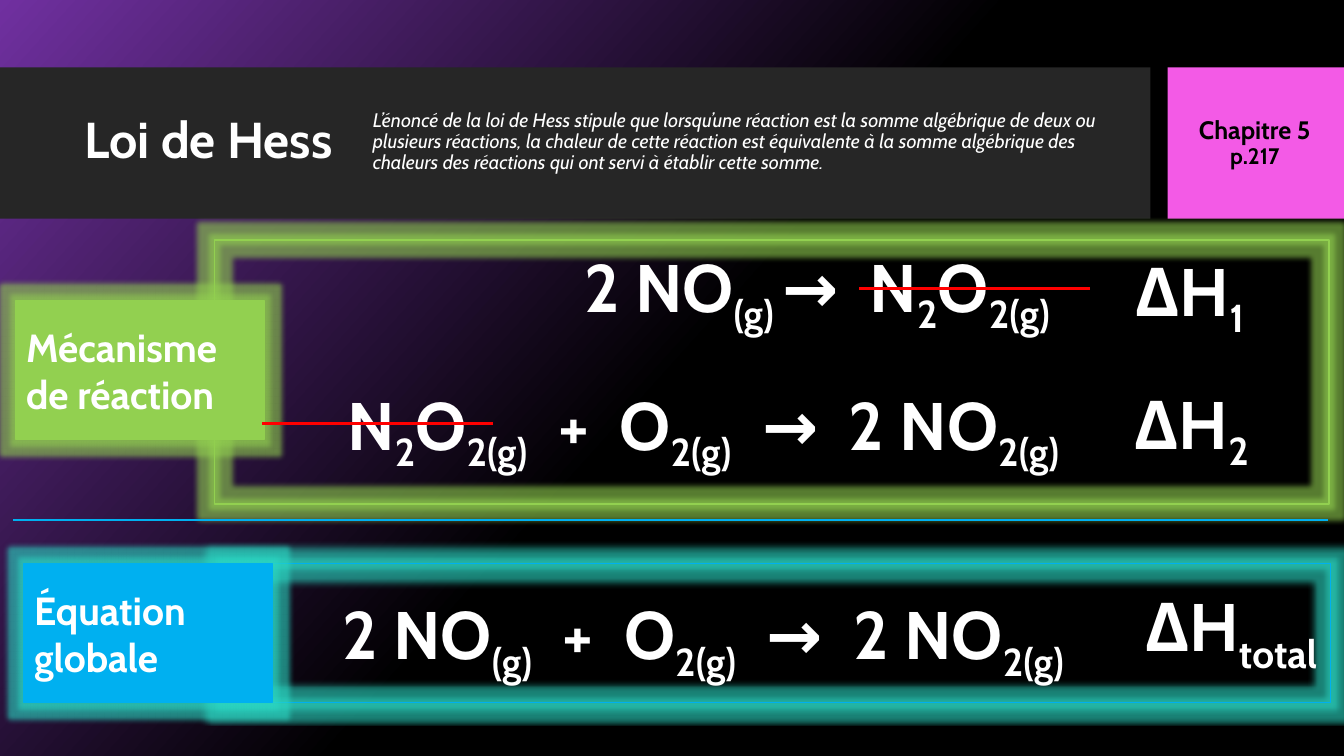
from lxml import etree
from pptx import Presentation
from pptx.dml.color import RGBColor
from pptx.enum.shapes import MSO_CONNECTOR, MSO_SHAPE
from pptx.enum.text import MSO_ANCHOR, PP_ALIGN
from pptx.oxml.ns import qn
from pptx.util import Inches, Pt

STRAIGHT = MSO_CONNECTOR.STRAIGHT
RECTANGLE = MSO_SHAPE.RECTANGLE
TOP, MIDDLE = MSO_ANCHOR.TOP, MSO_ANCHOR.MIDDLE
LEFT, CENTER = PP_ALIGN.LEFT, PP_ALIGN.CENTER
WHITE, BLACK, RED = "FFFFFF", "000000", "FF0000"
GREEN, BLUE, TEAL = "92D050", "00B0F0", "2BD8C4"
SUBSCRIPT = "-25000"
GAP_SPACING = "1100"

deck = Presentation()
deck.slide_width, deck.slide_height = Inches(13.33), Inches(7.5)
COLUMN, ROW = deck.slide_width / 100, deck.slide_height / 100
page = deck.slides.add_slide(deck.slide_layouts[6])


def paint(fill, colour):
    fill.solid()
    fill.fore_color.rgb = RGBColor.from_string(colour)


def write(para, text, size=48, colour=WHITE, bold=True, italic=False, align=CENTER, leading=1.0):
    para.alignment = align
    para.line_spacing = leading
    for part in text.split("|"):
        span = para.add_run()
        span.text = " " if part == "~" else part.removeprefix("_")
        span.font.name = "Cabin"
        span.font.size = Pt(size)
        span.font.bold = bold
        span.font.italic = italic
        paint(span.font.fill, colour)
        if part == "~":
            span.font._element.set("spc", GAP_SPACING)
        elif part.startswith("_"):
            span.font._element.set("baseline", SUBSCRIPT)


background = page.background.fill
background.gradient()
background.gradient_angle = 318
for stop, (position, colour) in zip(background.gradient_stops, [(0, "7030A0"), (0.5, BLACK)]):
    stop.position = position
    stop.color.rgb = RGBColor.from_string(colour)

# left, top, width, height in hundredths of the slide
panels = [
    (0, 8.93, 85.6, 20, "262626", None, None, None),
    (86.87, 8.93, 13.13, 20, "F35AE6", None, None, None),
    (16.5, 74.53, 82.52, 18.4, None, BLUE, TEAL, None),
    (1.8, 74.53, 18.45, 18.4, BLUE, BLUE, TEAL, "Équation globale"),
    (15.98, 31.73, 82.9, 34.93, None, GREEN, GREEN, None),
    (1.2, 39.73, 18.45, 18.4, GREEN, GREEN, GREEN, "Mécanisme de réaction"),
]
for left, top, width, height, fill, line, glow, label in panels:
    panel = page.shapes.add_shape(RECTANGLE, int(left * COLUMN), int(top * ROW),
                                  int(width * COLUMN), int(height * ROW))
    panel.shadow.inherit = False
    if fill:
        paint(panel.fill, fill)
    else:
        panel.fill.background()
    if line:
        paint(panel.line.fill, line)
        panel.line.width = Pt(1)
    else:
        panel.line.fill.background()
    if glow:
        effects = panel._element.spPr.find(qn("a:effectLst"))
        halo = etree.SubElement(effects, qn("a:glow"), rad=str(Pt(8)))
        tint = etree.SubElement(halo, qn("a:srgbClr"), val=glow)
        etree.SubElement(tint, qn("a:alpha"), val="60000")
    if label:
        panel.text_frame.word_wrap = True
        panel.text_frame.vertical_anchor = MIDDLE
        write(panel.text_frame.paragraphs[0], label, size=28, align=LEFT)

statement = (
    "L’énoncé de la loi de Hess stipule que lorsqu’une réaction est la somme algébrique de deux ou "
    "plusieurs réactions, la chaleur de cette réaction est équivalente à la somme algébrique des "
    "chaleurs des réactions qui ont servi à établir cette somme."
)
texts = [
    (5.55, 10.93, 78.85, 15.73, MIDDLE,
     [("Loi de Hess", dict(size=36, align=LEFT, leading=0.9))]),
    (86.72, 8.93, 13.28, 20.13, MIDDLE,
     [("Chapitre 5", dict(size=18, colour=BLACK, leading=0.9)),
      ("p.217", dict(size=16, colour=BLACK, leading=0.9))]),
    (27, 10.93, 56.71, 15.73, MIDDLE,
     [(statement, dict(size=14, bold=False, italic=True, align=LEFT, leading=0.9))]),
    (20.18, 77.73, 64.29, 12.13, TOP,
     [("2 NO|_(g)|~|+|~|O|_2(g)|~|→|~|2 NO|_2(g)", {})]),
    (33.68, 31.73, 54.24, 12.13, TOP,
     [("2 NO|_(g) |→|~|N|_2|O|_2(g)", {})]),
    (20.18, 50, 64.29, 12.13, TOP,
     [("N|_2|O|_2(g)|~|+|~|O|_2(g)|~|→|~|2 NO|_2(g)", {})]),
    (80.35, 32.93, 16.35, 12.13, MIDDLE, [("ΔH|_1", {})]),
    (80.5, 50.53, 16.35, 12.13, MIDDLE, [("ΔH|_2", {})]),
    (83.42, 76.67, 16.35, 13.33, MIDDLE, [("ΔH|_total", {})]),
]
for left, top, width, height, anchor, lines in texts:
    box = page.shapes.add_textbox(int(left * COLUMN), int(top * ROW),
                                  int(width * COLUMN), int(height * ROW))
    frame = box.text_frame
    frame.word_wrap = True
    frame.vertical_anchor = anchor
    for index, (text, style) in enumerate(lines):
        write(frame.add_paragraph() if index else frame.paragraphs[0], text, **style)

rules = [
    (0.98, 98.8, 68.8, BLUE, 1.5),
    (63.92, 81.1, 38.13, RED, 2.25),
    (19.5, 36.68, 56, RED, 2.25),
]
for start, end, level, colour, weight in rules:
    rule = page.shapes.add_connector(STRAIGHT, int(start * COLUMN), int(level * ROW),
                                     int(end * COLUMN), int(level * ROW))
    paint(rule.line.fill, colour)
    rule.line.width = Pt(weight)
    etree.SubElement(rule._element.spPr, qn("a:effectLst"))

deck.save("out.pptx")
